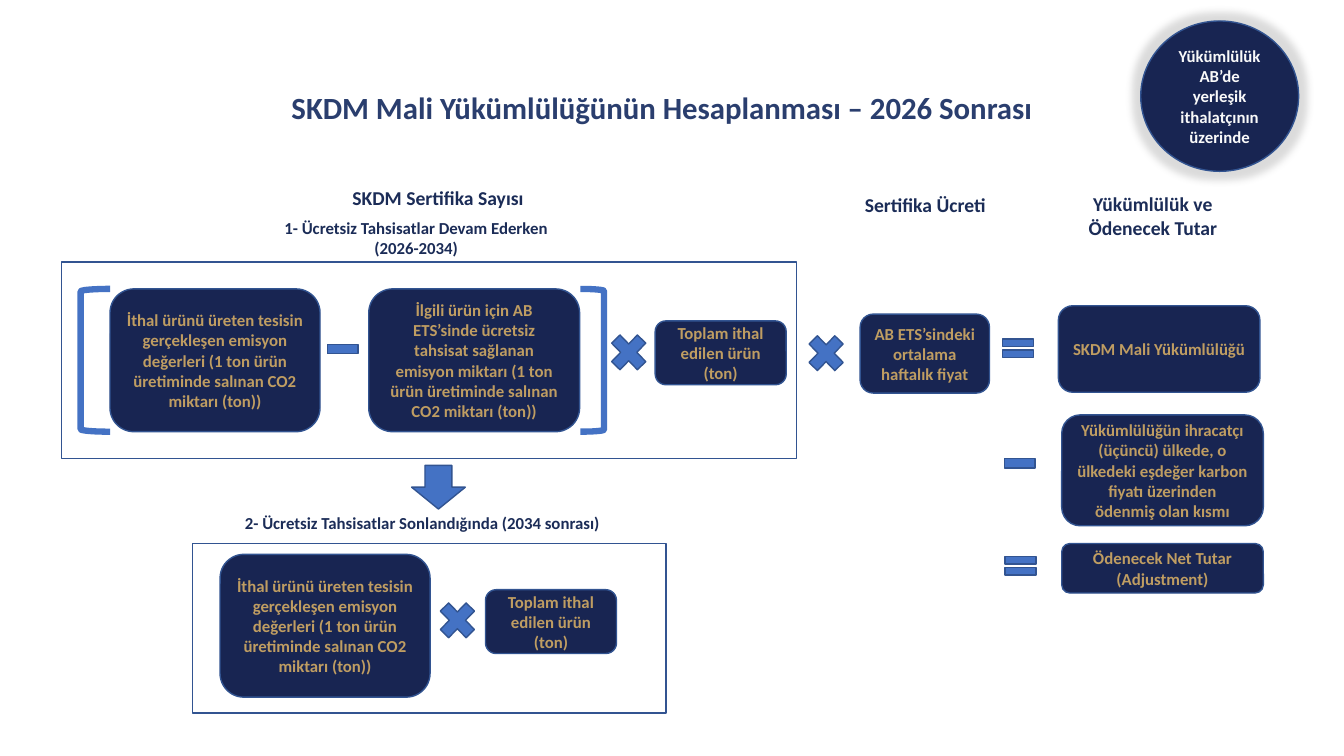
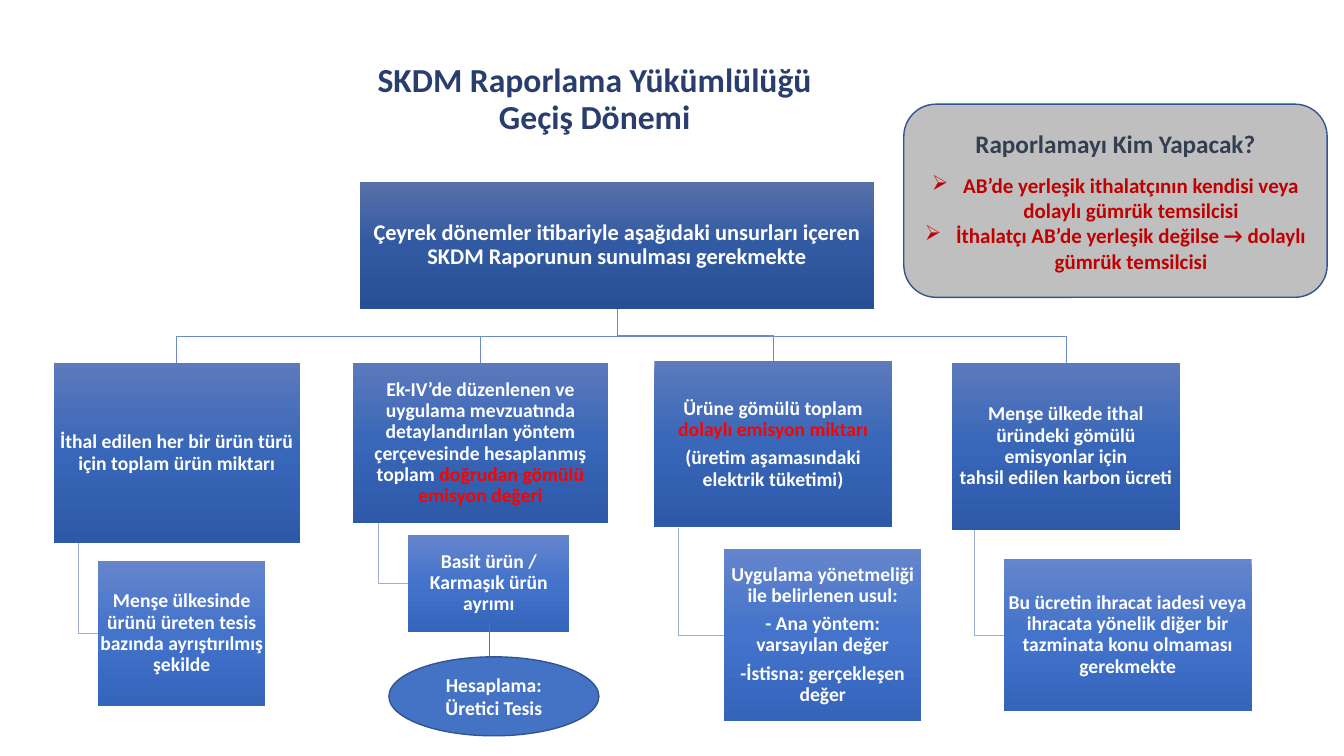
from lxml import etree
from pptx import Presentation
from pptx.dml.color import RGBColor
from pptx.enum.shapes import MSO_CONNECTOR, MSO_SHAPE
from pptx.enum.text import MSO_ANCHOR, MSO_AUTO_SIZE, PP_ALIGN
from pptx.oxml.ns import qn
from pptx.util import Inches, Pt

RECT, ROUND, OVAL = MSO_SHAPE.RECTANGLE, MSO_SHAPE.ROUNDED_RECTANGLE, MSO_SHAPE.OVAL
MINUS, TIMES, EQUAL = MSO_SHAPE.MATH_MINUS, MSO_SHAPE.MATH_MULTIPLY, MSO_SHAPE.MATH_EQUAL
DOWN = MSO_SHAPE.DOWN_ARROW
L_BRACKET, R_BRACKET = MSO_SHAPE.LEFT_BRACKET, MSO_SHAPE.RIGHT_BRACKET
STRAIGHT = MSO_CONNECTOR.STRAIGHT
TOP, MIDDLE = MSO_ANCHOR.TOP, MSO_ANCHOR.MIDDLE
LEFT, CENTER = PP_ALIGN.LEFT, PP_ALIGN.CENTER
NO_FIT = MSO_AUTO_SIZE.NONE

FONT = "Calibri"
COLORS = {
    "title": "2A3E6E", "label": "1B2C57", "navy": "182552", "gold": "BF9D62",
    "blue": "4472C4", "edge": "325491", "white": "FFFFFF", "pale": "F9F9F9",
    "gray": "BFBFBF", "slate": "333F50", "red": "FF0000", "dark_red": "C00000",
    "branch": "6D89CB", "twig": "9EADD8", "glow": "A6A6A6",
}
GRADIENTS = {  # top, middle, bottom
    "root": ("5870A9", "315AA2", "274F95"),
    "item": ("5C7ABD", "3866B8", "2D59A8"),
    "detail": ("6585CC", "4373CB", "3564BB"),
}
COLUMNS, ROWS = 160, 90


def rgb(name):
    return RGBColor.from_string(COLORS[name])


def write(tf, text, size=12, color="gold", align=CENTER, spacing=None, before=0, bullet=None):
    """Add one paragraph; text is a string or a list of (string, colour) runs."""
    first = not tf.text
    p = tf.paragraphs[0] if first else tf.add_paragraph()
    p.alignment = align
    if spacing:
        p.line_spacing = spacing
    if not first:
        p.space_before = Pt(before)
    if bullet:
        pPr = p._p.get_or_add_pPr()
        pPr.set("marL", str(Inches(0.31)))
        pPr.set("indent", str(-Inches(0.31)))
        etree.SubElement(pPr, qn("a:buChar"), char=bullet)
    for part, part_color in [(text, color)] if isinstance(text, str) else text:
        for i, line in enumerate(part.split("\n")):
            if i:
                p.add_line_break()
            r = p.add_run()
            r.text = line
            r.font.name, r.font.size, r.font.bold = FONT, Pt(size), True
            r.font.color.rgb = rgb(part_color)


class Deck:
    def __init__(self):
        self.prs = Presentation()
        self.prs.slide_width, self.prs.slide_height = Inches(13.333), Inches(7.5)
        self.slide = None

    def x(self, columns):
        return round(self.prs.slide_width * columns / COLUMNS)

    def y(self, rows):
        return round(self.prs.slide_height * rows / ROWS)

    def place(self, box):
        left, top, width, height = box
        return self.x(left), self.y(top), self.x(width), self.y(height)

    def frame(self, sp, anchor, inset=None):
        tf = sp.text_frame
        tf.word_wrap, tf.auto_size, tf.vertical_anchor = True, NO_FIT, anchor
        if inset is not None:
            tf.margin_left = tf.margin_right = tf.margin_top = tf.margin_bottom = Inches(inset)
        return tf

    def new_slide(self, title, box, **fmt):
        self.slide = self.prs.slides.add_slide(self.prs.slide_layouts[5])
        sp = self.slide.shapes.title
        sp.left, sp.top, sp.width, sp.height = self.place(box)
        write(self.frame(sp, TOP), title, color="title", **fmt)

    def label(self, text, box, size=14):
        sp = self.slide.shapes.add_textbox(*self.place(box))
        write(self.frame(sp, TOP), text, size=size, color="label")

    def shape(self, kind, box, fill=None, line="edge", width=1, text=None, **fmt):
        sp = self.slide.shapes.add_shape(kind, *self.place(box))
        sp.shadow.inherit = False
        if fill:
            sp.fill.solid()
            sp.fill.fore_color.rgb = rgb(fill)
        else:
            sp.fill.background()
        sp.line.color.rgb, sp.line.width = rgb(line), Pt(width)
        if text:
            write(self.frame(sp, MIDDLE), text, **fmt)
        return sp

    def term(self, text, box):
        self.shape(ROUND, box, fill="navy", text=text)

    def operator(self, kind, left, top):
        width, height = {MINUS: (5, 4.7), TIMES: (5.9, 6.1), EQUAL: (5, 3.7)}[kind]
        self.shape(kind, (left, top, width, height), fill="blue")

    def glow(self, sp, radius):
        effects = sp.element.spPr.find(qn("a:effectLst"))
        halo = etree.SubElement(effects, qn("a:glow"), rad=str(Pt(radius)))
        color = etree.SubElement(halo, qn("a:srgbClr"), val=COLORS["glow"])
        etree.SubElement(color, qn("a:alpha"), val="40000")

    def node(self, level, box, paragraphs, size=14):
        sp = self.slide.shapes.add_shape(RECT, *self.place(box))
        sp.shadow.inherit = False
        sp.line.fill.background()
        sp.fill.gradient()
        sp.fill.gradient_angle = 270
        stops = sp.element.spPr.find(".//" + qn("a:gsLst"))
        for stop in list(stops):
            stops.remove(stop)
        for i, value in enumerate(GRADIENTS[level]):
            stop = etree.SubElement(stops, qn("a:gs"), pos=str(i * 50000))
            etree.SubElement(stop, qn("a:srgbClr"), val=value)
        tf = self.frame(sp, MIDDLE, inset=0.01)
        for text in paragraphs:
            write(tf, text, size=size, color="white", spacing=0.9, before=5)

    def route(self, points, color):
        start, *rest = [(self.x(a), self.y(b)) for a, b in points]
        builder = self.slide.shapes.build_freeform(*start)
        builder.add_line_segments(rest, close=False)
        sp = builder.convert_to_shape()
        sp.shadow.inherit = False
        sp.fill.background()
        sp.line.color.rgb, sp.line.width = rgb(color), Pt(0.5)

    def line(self, x1, y1, x2, y2):
        cx = self.slide.shapes.add_connector(
            STRAIGHT, self.x(x1), self.y(y1), self.x(x2), self.y(y2))
        cx.line.color.rgb, cx.line.width = rgb("blue"), Pt(0.5)
        etree.SubElement(cx.element.spPr, qn("a:effectLst"))


def build_calculation(d):
    d.new_slide("SKDM Mali Yükümlülüğünün Hesaplanması – 2026 Sonrası",
                (33.5, 10, 98, 5.6), size=22, align=LEFT)
    emissions = ("İthal ürünü üreten tesisin gerçekleşen emisyon değerleri "
                 "(1 ton ürün üretiminde salınan CO2 miktarı (ton))")
    tonnage = "Toplam ithal edilen ürün (ton)"

    # Headings
    d.label("SKDM Sertifika Sayısı", (33.8, 21.6, 36.7, 4.1))
    d.label("Sertifika Ücreti", (100, 22.4, 20.3, 4.1))
    d.label("Yükümlülük ve Ödenecek Tutar", (124.1, 22.3, 26.3, 6.8))
    d.label("1- Ücretsiz Tahsisatlar Devam Ederken (2026-2034)", (31.2, 25.3, 36.7, 6), size=12)
    d.label("2- Ücretsiz Tahsisatlar Sonlandığında (2034 sonrası)", (26.5, 60.5, 47.6, 3.6), size=12)

    # Frames, brackets and the arrow between the two stages
    d.shape(RECT, (7.3, 31.2, 87.5, 23.4))
    d.shape(RECT, (22.9, 64.7, 56.4, 20.2))
    for kind, left, width in ((L_BRACKET, 9.6, 3.5), (R_BRACKET, 69.1, 2.8)):
        d.shape(kind, (left, 34.4, width, 17), line="blue", width=4.5)
    d.shape(DOWN, (49, 55.4, 6.4, 5.2), fill="blue")

    # Terms of the formulas
    for text, box in (
        (emissions, (13.1, 34.4, 25, 17)),
        ("İlgili ürün için AB ETS’sinde ücretsiz tahsisat sağlanan emisyon miktarı "
         "(1 ton ürün üretiminde salınan CO2 miktarı (ton))", (43.9, 34.4, 25.1, 17)),
        (tonnage, (78, 38.2, 15.6, 7.6)),
        ("AB ETS’sindeki ortalama haftalık fiyat", (102.4, 37.4, 15.4, 9.4)),
        ("SKDM Mali Yükümlülüğü", (126, 36.4, 24, 10.3)),
        ("Yükümlülüğün ihracatçı (üçüncü) ülkede, o ülkedeki eşdeğer karbon fiyatı "
         "üzerinden ödenmiş olan kısmı", (126.4, 49.4, 24, 13.2)),
        ("Ödenecek Net Tutar (Adjustment)", (126.4, 64.7, 24, 5.9)),
        (emissions, (26.2, 66, 25, 17)),
        (tonnage, (57.8, 70.2, 15.6, 7.6)),
    ):
        d.term(text, box)

    # Operators
    for kind, left, top in (
        (MINUS, 38.3, 39.2), (TIMES, 71.9, 38.9), (TIMES, 95.4, 39), (EQUAL, 118.7, 39.6),
        (MINUS, 118.9, 52.8), (EQUAL, 119, 65.5), (TIMES, 51.5, 70.8),
    ):
        d.operator(kind, left, top)

    # Badge
    badge = d.shape(OVAL, (135.8, 2.5, 18.8, 17.9), fill="navy", color="pale",
                    text="Yükümlülük AB’de yerleşik ithalatçının üzerinde")
    d.glow(badge, 11)


def build_reporting(d):
    d.new_slide("SKDM Raporlama Yükümlülüğü\nGeçiş Dönemi", (38.8, 7, 64, 8.6),
                size=24, spacing=0.9)
    root = (42.8, 21.7, 61.3, 15.1)
    branches = (  # item box and text, detail box and text
        ((6.4, 43.2, 29.3, 21.5), ["İthal edilen her bir ürün türü için toplam ürün miktarı"],
         (11.7, 66.8, 19.9, 17.2),
         ["Menşe ülkesinde ürünü üreten tesis bazında ayrıştırılmış şekilde"]),
        ((42, 43.2, 30.4, 19.1),
         [[("Ek-IV’de düzenlenen ve uygulama mevzuatında detaylandırılan yöntem "
            "çerçevesinde hesaplanmış toplam ", "white"),
           ("doğrudan gömülü emisyon değeri", "red")]],
         (48.6, 63.7, 19.2, 11.5), ["Basit ürün / Karmaşık ürün ayrımı"]),
        ((77.9, 43, 28.3, 19.8),
         [[("Ürüne gömülü toplam ", "white"), ("dolaylı emisyon miktarı", "red")],
          "(üretim aşamasındaki elektrik tüketimi)"],
         (86.2, 65.4, 23.5, 20.4),
         ["Uygulama yönetmeliği ile belirlenen usul:", "- Ana yöntem: varsayılan değer",
          "-İstisna: gerçekleşen değer"]),
        ((113.3, 43.2, 27.2, 19.9),
         ["Menşe ülkede ithal\nüründeki gömülü\nemisyonlar için\ntahsil edilen karbon ücreti"],
         (119.5, 66.6, 29.5, 18),
         ["Bu ücretin ihracat iadesi veya ihracata yönelik diğer bir tazminata "
          "konu olmaması gerekmekte"]),
    )

    # Tree: each item hangs from the root, each detail from its item
    hub, base = root[0] + root[2] / 2, root[1] + root[3]
    for item, item_text, detail, detail_text in branches:
        left, top, width, height = item
        center, bend = left + width / 2, top - 3.1
        d.route([(hub, base), (hub, bend), (center, bend), (center, top)], "branch")
        stem, level = left + width / 10, detail[1] + detail[3] / 2
        d.route([(stem, top + height), (stem, level), (detail[0], level)], "twig")
        d.node("item", item, item_text)
        d.node("detail", detail, detail_text)
    d.node("root", root, ["Çeyrek dönemler itibariyle aşağıdaki unsurları içeren "
                          "SKDM Raporunun sunulması gerekmekte"], size=16)

    # Calculation note
    d.shape(OVAL, (46.3, 78.2, 25, 9.4), fill="blue", text="Hesaplama: Üretici Tesis",
            size=14, color="white")
    d.line(58.3, 74, 58.3, 78.2)

    # Callout
    callout = d.shape(ROUND, (107.6, 12.4, 50.4, 23), fill="gray",
                      text="Raporlamayı Kim Yapacak?", size=18, color="slate")
    for text, before in (
        ("AB’de yerleşik ithalatçının kendisi veya dolaylı gümrük temsilcisi", 10),
        ("İthalatçı AB’de yerleşik değilse → dolaylı gümrük temsilcisi", 0),
    ):
        write(callout.text_frame, text, size=15, color="dark_red", before=before, bullet="➢")


def main():
    deck = Deck()
    build_calculation(deck)
    build_reporting(deck)
    deck.prs.save("out.pptx")


if __name__ == "__main__":
    main()
